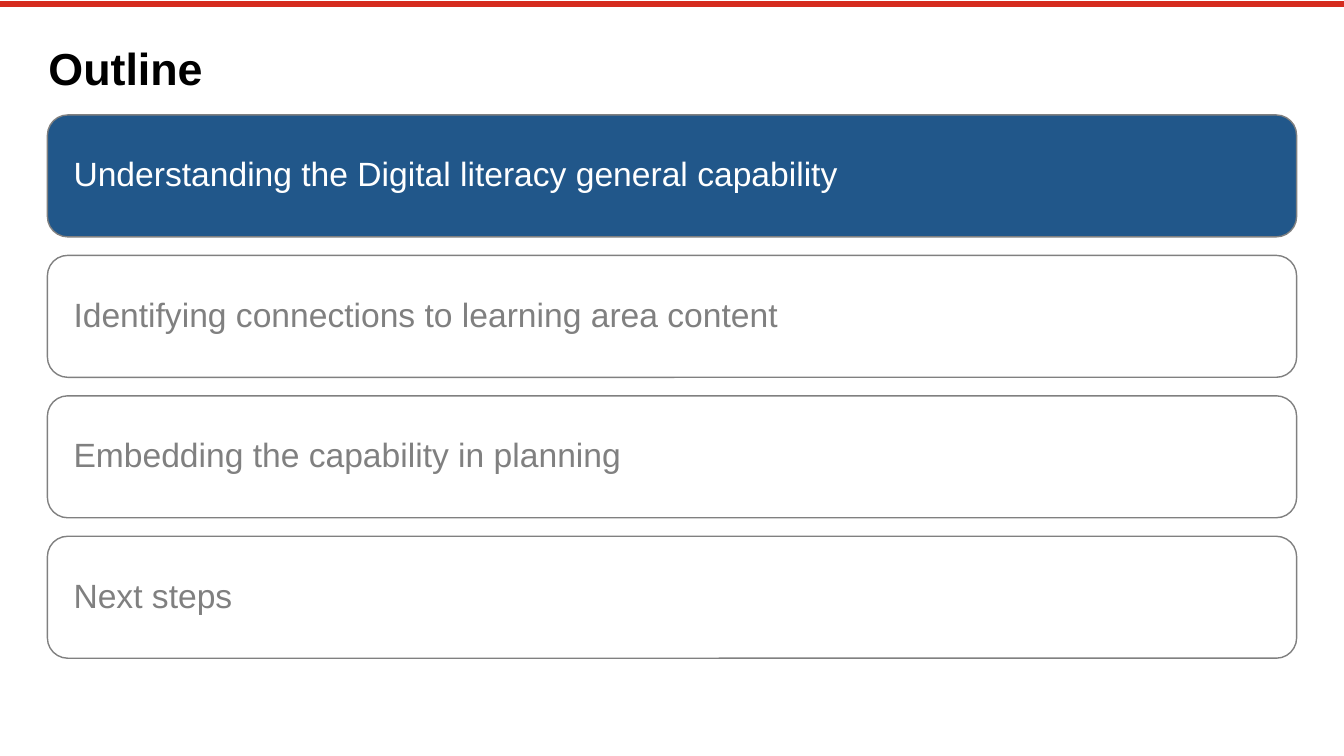
from pptx import Presentation
from pptx.dml.color import RGBColor
from pptx.enum.shapes import MSO_CONNECTOR, MSO_SHAPE
from pptx.enum.text import MSO_ANCHOR, PP_ALIGN
from pptx.util import Pt
from lxml import etree

STRAIGHT = MSO_CONNECTOR.STRAIGHT
ROUNDED = MSO_SHAPE.ROUNDED_RECTANGLE
TOP, MIDDLE = MSO_ANCHOR.TOP, MSO_ANCHOR.MIDDLE
LEFT = PP_ALIGN.LEFT

RED = RGBColor(0xD5, 0x2B, 0x1E)
BLUE = RGBColor(0x21, 0x57, 0x8A)
GREY = RGBColor(0x80, 0x80, 0x80)
WHITE = RGBColor(0xFF, 0xFF, 0xFF)
BLACK = RGBColor(0x00, 0x00, 0x00)

PX = 9144
WIDTH, HEIGHT = 1333, 750
EFFECT_LIST = "{http://schemas.openxmlformats.org/drawingml/2006/main}effectLst"

SECTIONS = [
    "Understanding the Digital literacy general capability",
    "Identifying connections to learning area content",
    "Embedding the capability in planning",
    "Next steps",
]
CURRENT = 0
CARD_LEFT, CARD_WIDTH, CARD_HEIGHT = 47, 1239, 121
FIRST_TOP, LAST_TOP = 114, 532


def px(*values):
    return [round(v * PX) for v in values]


class Deck:
    font = "Arial"

    def __init__(self):
        self.prs = Presentation()
        self.prs.slide_width, self.prs.slide_height = px(WIDTH, HEIGHT)
        self.slide = self.prs.slides.add_slide(self.prs.slide_layouts[6])

    def set_text(self, sp, text, insets, anchor, spacing, color, **fmt):
        tf = sp.text_frame
        tf.word_wrap = True
        tf.vertical_anchor = anchor
        for side, value in zip(("left", "top", "right", "bottom"), px(*insets)):
            setattr(tf, f"margin_{side}", value)
        p = tf.paragraphs[0]
        p.alignment = LEFT
        p.line_spacing = spacing
        r = p.add_run()
        r.text = text
        for name, value in {"name": self.font, **fmt}.items():
            setattr(r.font, name, value)
        r.font.color.rgb = color

    def rule(self, x1, y1, x2, y2, color, weight):
        line = self.slide.shapes.add_connector(STRAIGHT, *px(x1, y1, x2, y2))
        line.line.color.rgb = color
        line.line.width = Pt(weight)
        etree.SubElement(line._element.spPr, EFFECT_LIST)

    def title(self, x, y, w, h, text):
        sp = self.slide.shapes.add_textbox(*px(x, y, w, h))
        self.set_text(sp, text, (0, 0, 0, 0), TOP, 1.0, BLACK,
                      size=Pt(32), bold=True)

    def card(self, x, y, w, h, text, fill, color):
        sp = self.slide.shapes.add_shape(ROUNDED, *px(x, y, w, h))
        sp.shadow.inherit = False
        sp.fill.solid()
        sp.fill.fore_color.rgb = fill
        sp.line.color.rgb = GREY
        sp.line.width = Pt(1)
        self.set_text(sp, text, (20, 10, 10, 10), MIDDLE, 0.9, color,
                      size=Pt(24))


def main():
    deck = Deck()
    deck.rule(0, 4, WIDTH, 4, RED, 4.2)
    deck.title(48, 40, 1239, 52, "Outline")
    pitch = (LAST_TOP - FIRST_TOP) / (len(SECTIONS) - 1)
    for i, section in enumerate(SECTIONS):
        fill, color = (BLUE, WHITE) if i == CURRENT else (WHITE, GREY)
        deck.card(CARD_LEFT, FIRST_TOP + i * pitch, CARD_WIDTH, CARD_HEIGHT,
                  section, fill, color)
    deck.prs.save("out.pptx")


if __name__ == "__main__":
    main()
